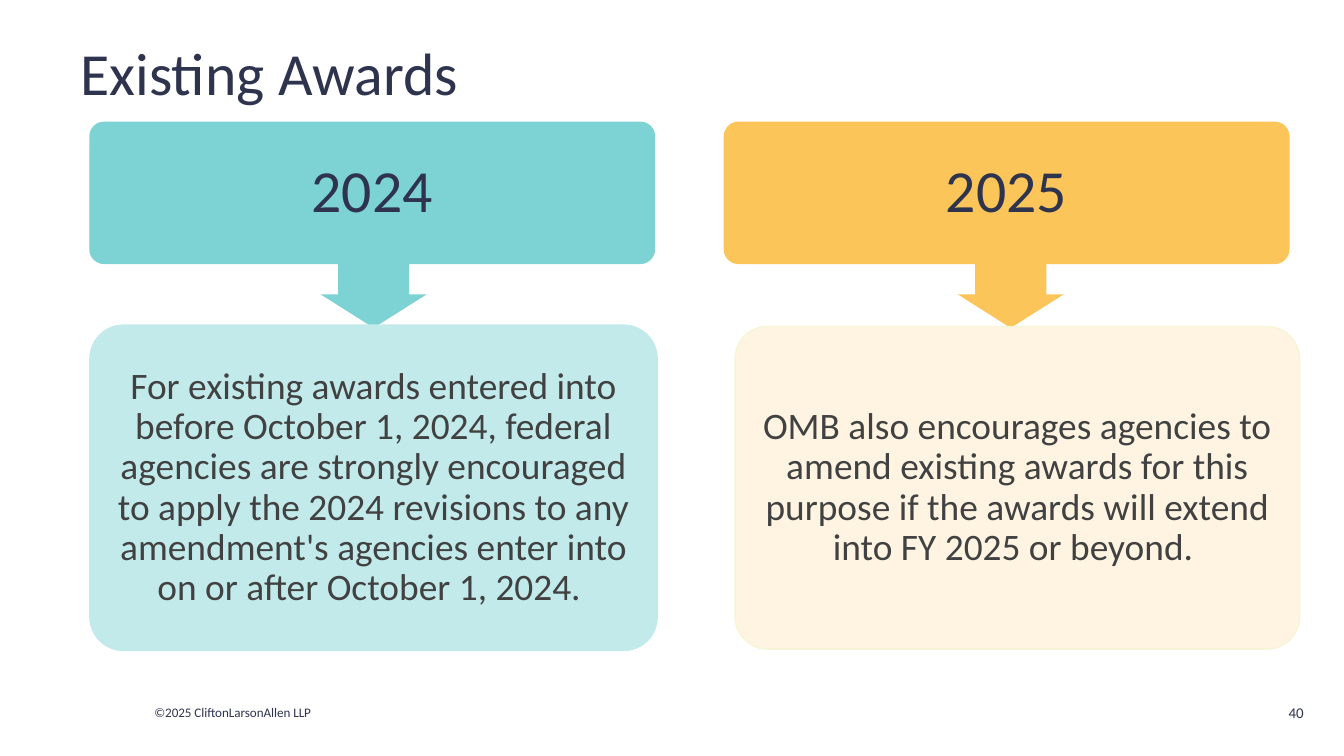
"""Build the "Existing Awards" slide: two years, each leading to its guidance."""
from lxml.etree import SubElement
from pptx import Presentation
from pptx.dml.color import RGBColor
from pptx.enum.shapes import MSO_SHAPE
from pptx.enum.text import MSO_ANCHOR, PP_ALIGN
from pptx.oxml.ns import qn
from pptx.util import Inches, Pt

NAVY = RGBColor(0x2E, 0x33, 0x4E)
GRAY = RGBColor(0x41, 0x41, 0x42)
TEAL = RGBColor(0x7D, 0xD2, 0xD3)
PALE_TEAL = RGBColor(0xC2, 0xEA, 0xEA)
AMBER = RGBColor(0xFB, 0xC5, 0x5A)
CREAM = RGBColor(0xFE, 0xF3, 0xDE)
PALE_LIME = RGBColor(0xF4, 0xF6, 0xD4)

BOX_WIDTH = 4.2
ARROW_WIDTH = 0.79


def write(frame, text, size, color, align=PP_ALIGN.LEFT, spacing=None):
    """Put one styled paragraph in a vertically centred frame."""
    frame.word_wrap = True
    frame.vertical_anchor = MSO_ANCHOR.MIDDLE
    paragraph = frame.paragraphs[0]
    paragraph.text = text
    paragraph.alignment = align
    paragraph.line_spacing = spacing
    paragraph.font.name = "Calibri"
    paragraph.font.size = Pt(size)
    paragraph.font.color.rgb = color


def add_label(slide, box, text, size, align=PP_ALIGN.LEFT):
    """Add plain navy text."""
    label = slide.shapes.add_textbox(*map(Inches, box))
    write(label.text_frame, text, size, NAVY, align)


def add_filled(slide, preset, box, fill, adjustments):
    """Add a flat preset shape without an outline."""
    shape = slide.shapes.add_shape(preset, *map(Inches, box))
    shape.shadow.inherit = False
    shape.fill.solid()
    shape.fill.fore_color.rgb = fill
    shape.line.fill.background()
    for index, value in enumerate(adjustments):
        shape.adjustments[index] = value
    return shape


def add_box(slide, box, text, size, color, fill, outline, weight):
    """Add an outlined rounded box with centred text."""
    panel = add_filled(slide, MSO_SHAPE.ROUNDED_RECTANGLE, box, fill, [0.1])
    panel.line.color.rgb = outline
    panel.line.width = Pt(weight)
    frame = panel.text_frame
    frame.margin_left = frame.margin_right = Inches(0.1)
    frame.margin_top = frame.margin_bottom = Inches(0.1)
    write(frame, text, size, color, PP_ALIGN.CENTER, 0.9)
    return panel


def set_opacity(shape, percent):
    """Make the fill and outline of a shape partly transparent."""
    for color in shape.element.spPr.iter(qn("a:srgbClr")):
        SubElement(color, qn("a:alpha"), val=str(percent * 1000))


def add_year(slide, year, year_left, arrow_center, color):
    """Add a year heading with an arrow pointing down from it."""
    add_box(slide, (year_left, 0.91, BOX_WIDTH, 1.05), year, 32, NAVY,
            color, color, 0.75)
    arrow_left = arrow_center - ARROW_WIDTH / 2
    add_filled(slide, MSO_SHAPE.DOWN_ARROW,
               (arrow_left, 1.94, ARROW_WIDTH, 0.5), color, [0.67, 0.5])


def add_guidance(slide, left, text, fill, outline, weight):
    """Add the guidance box below a year."""
    return add_box(slide, (left, 2.43, BOX_WIDTH, 2.4), text, 20, GRAY,
                   fill, outline, weight)


def main():
    """Build and save the slide."""
    presentation = Presentation()
    presentation.slide_width = Inches(10)
    presentation.slide_height = Inches(10) * 9 // 16
    slide = presentation.slides.add_slide(presentation.slide_layouts[6])

    add_label(slide, (1.05, 5.19, 1.51, 0.22), "©2025 CliftonLarsonAllen LLP", 7)
    add_label(slide, (0.5, 0.16, 9, 0.75), "Existing Awards", 32)
    add_label(slide, (9.37, 5.11, 0.43, 0.38), "40", 8, PP_ALIGN.RIGHT)

    add_year(slide, "2024", 0.67, 2.78, TEAL)
    add_guidance(
        slide, 0.68,
        "For existing awards entered into before October 1, 2024, federal "
        "agencies are strongly encouraged to apply the 2024 revisions to any "
        "amendment's agencies enter into on or after October 1, 2024. ",
        PALE_TEAL, PALE_TEAL, 2.25)

    add_year(slide, "2025", 5.39, 7.52, AMBER)
    extension = add_guidance(
        slide, 5.47,
        "OMB also encourages agencies to amend existing awards for this "
        "purpose if the awards will extend into FY 2025 or beyond. ",
        CREAM, PALE_LIME, 0.75)
    set_opacity(extension, 90)

    presentation.save("out.pptx")


if __name__ == "__main__":
    main()
